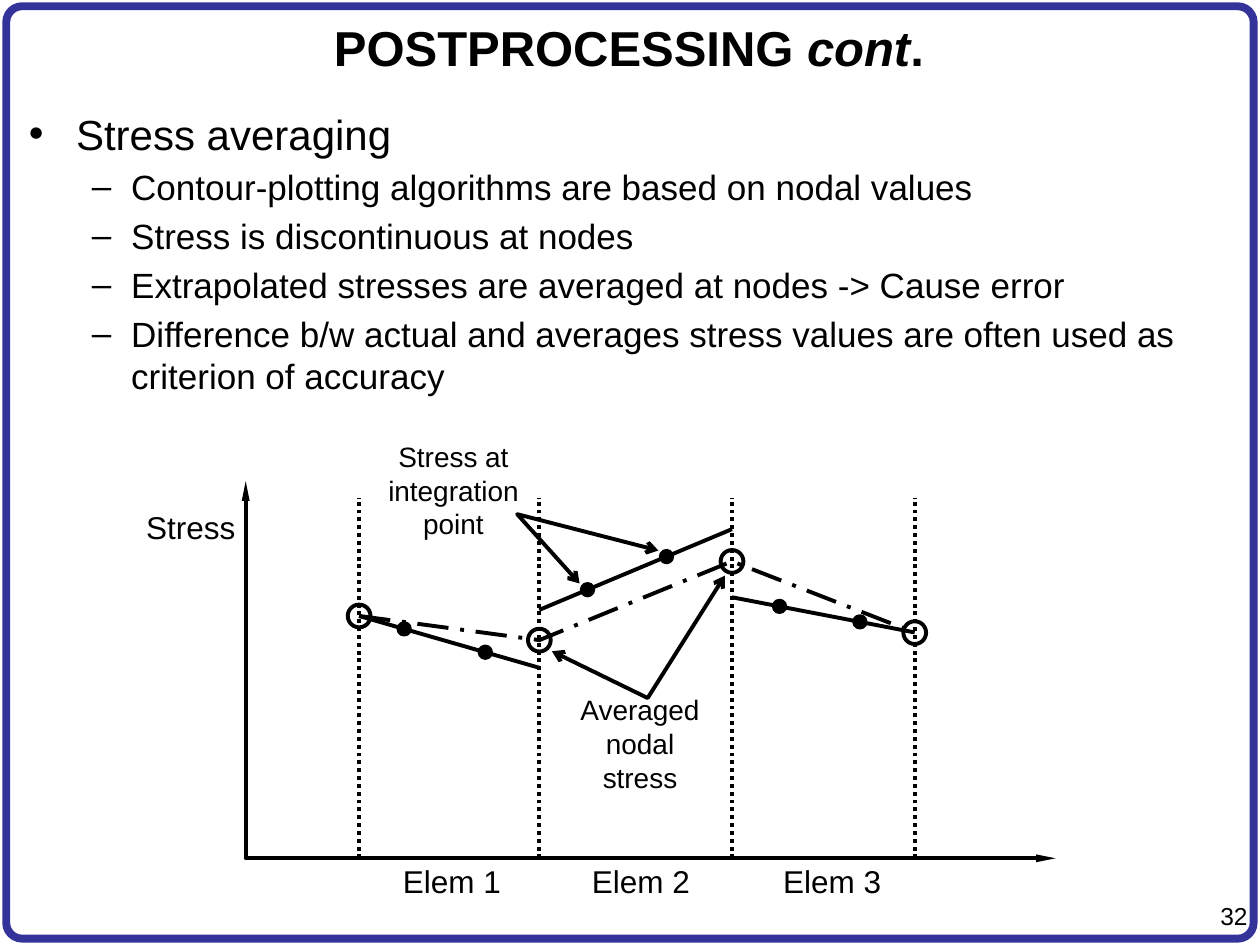
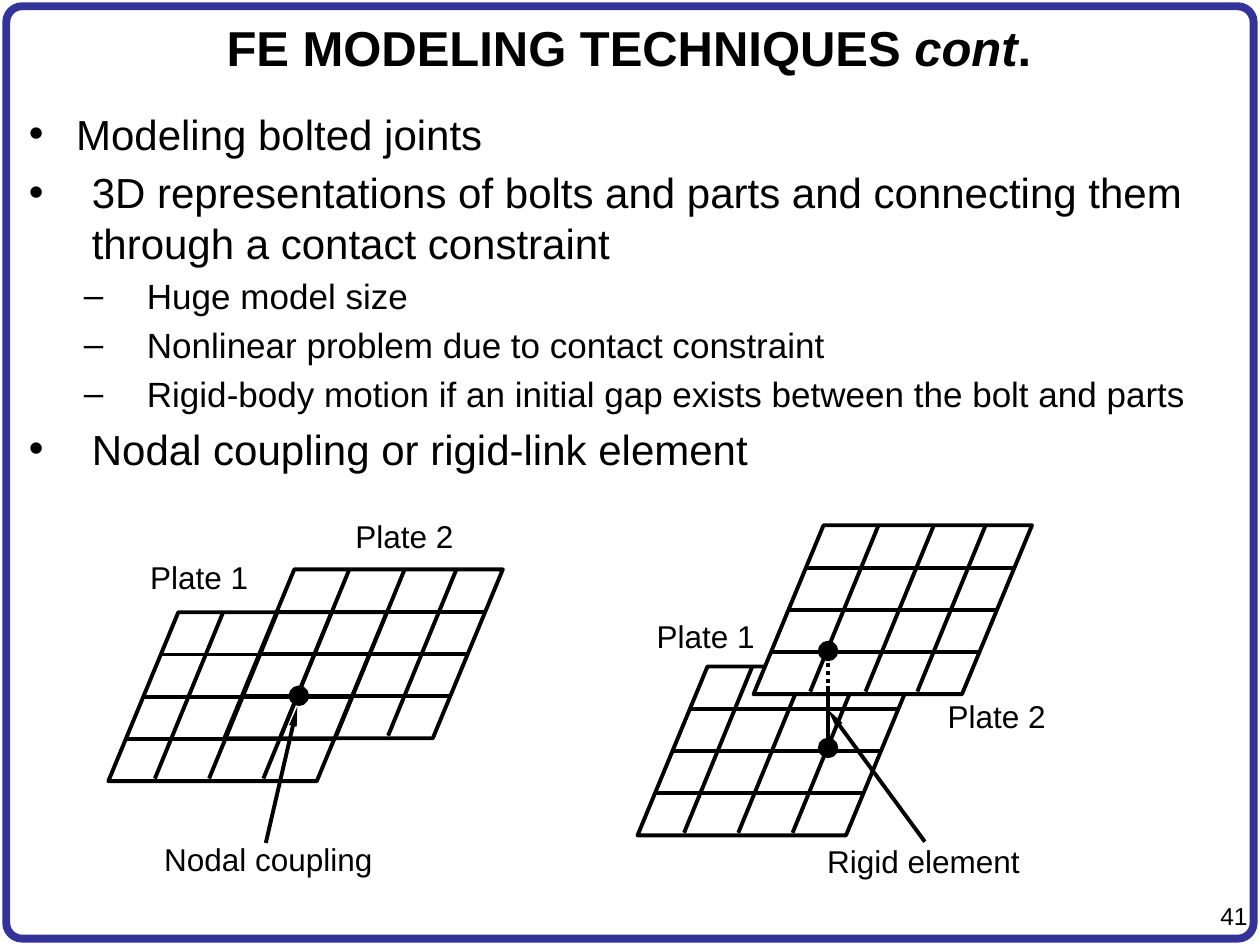
import pptx
import pptx.dml.color
import pptx.enum.dml
import pptx.enum.shapes
import pptx.enum.text
import pptx.oxml
import pptx.oxml.ns
import pptx.util

Pt = pptx.util.Pt
SHAPES = pptx.enum.shapes.MSO_SHAPE
DASH = pptx.enum.dml.MSO_LINE
ALIGN = pptx.enum.text.PP_ALIGN
ANCHOR = pptx.enum.text.MSO_ANCHOR

COLORS = {"frame": "333399", "ink": "000000", "paper": "FFFFFF"}
FONT = "Arial"
LINE_WEIGHT = 2.25
SLENDER = ("triangle", "sm", "lg")
OPEN = ("arrow", "med", "med")

# Bullet styles: left margin, hanging indent, bullet, text size
TOPIC = (27, 27, "•", 24)
WIDE_TOPIC = (36, 36, "•", 24)
DETAIL = (58.5, 22.5, "–", 20)
WIDE_DETAIL = (67.5, 36, "–", 20)

STRESS_SLIDE = {
    "title": "POSTPROCESSING ",
    "number": "32",
    "bullets": [
        (TOPIC, "Stress averaging"),
        (DETAIL, "Contour-plotting algorithms are based on nodal values"),
        (DETAIL, "Stress is discontinuous at nodes"),
        (DETAIL, "Extrapolated stresses are averaged at nodes -> Cause error"),
        (DETAIL, "Difference b/w actual and averages stress values are often "
                 "used as criterion of accuracy"),
    ],
}
JOINT_SLIDE = {
    "title": "FE MODELING TECHNIQUES ",
    "number": "41",
    "bullets": [
        (TOPIC, "Modeling bolted joints"),
        (WIDE_TOPIC, "3D representations of bolts and parts and connecting them "
                     "through a contact constraint"),
        (WIDE_DETAIL, "Huge model size"),
        (WIDE_DETAIL, "Nonlinear problem due to contact constraint"),
        (WIDE_DETAIL, "Rigid-body motion if an initial gap exists between the bolt and parts"),
        (WIDE_TOPIC, "Nodal coupling or rigid-link element"),
    ],
}

# Stress plot
AXES = [(140.4, 275), (140.4, 490.5), (603.2, 490.5)]
NODE_LINE_TOP = 284.4
NODES = [(205.2, 352), (308.2, 365.8), (418.3, 320.8), (522.7, 361.5)]
# Stress at the two ends of each element, and where its integration points lie
ELEMENTS = [
    ((352, 381.6), (0.25, 0.7)),
    ((348.5, 302.4), (0.25, 0.66)),
    ((341.3, 361.4), (0.26, 0.7)),
]
STRESS_POINTERS = [
    [(331.2, 333.4), (295.5, 293.8), (376.2, 314.6)],
    [(315.4, 372.2), (370.1, 398.9), (414.2, 329)],
]
# Labels: text, left, top, width, size
STRESS_LABELS = [
    ("Stress", 72.7, 290.2, 72.7, 18),
    ("Elem 1", 221.8, 492.5, 72.7, 18),
    ("Elem 2", 329.8, 492.5, 72.7, 18),
    ("Elem 3", 439.2, 492.5, 72.7, 18),
    ("Averaged nodal stress", 324, 396, 83.5, 16),
    ("Stress at integration point", 217.4, 251.3, 83.5, 16),
]

# Plate meshes: left, top, column offsets along the base, fill
PLATE_WIDTH, PLATE_HEIGHT, SKEW, ROWS = 159.1, 96.5, 40, 4
PLATE_1_COLUMNS = (26.6, 57.6, 88.6)
PLATE_2_COLUMNS = (32.4, 64, 93.6)
PLATES = [
    (61.9, 349.9, PLATE_1_COLUMNS, "paper"),
    (128.2, 325.4, PLATE_2_COLUMNS, None),
    (364.3, 380.9, PLATE_1_COLUMNS, None),
    (430.6, 300.2, PLATE_2_COLUMNS, "paper"),
]
COUPLED_NODE = (170.8, 397.6)
RIGID_TOP, RIGID_BOTTOM = (473.2, 372), (473.2, 427.4)
PLATE_EDGE_Y = 394.5
JOINT_POINTERS = [((151.9, 481.7), (169.9, 403.9)), ((528.5, 481), (473, 405.4))]
JOINT_LABELS = [
    ("Plate 1", 71.3, 319, 85, 18),
    ("Plate 2", 188.6, 295.2, 85, 18),
    ("Nodal coupling", 83.5, 480.2, 139.7, 18),
    ("Plate 1", 360.7, 352.8, 85, 18),
    ("Plate 2", 527, 398.2, 85, 18),
    ("Rigid element", 457.9, 481, 139.7, 18),
]


def rgb(name):
    return pptx.dml.color.RGBColor.from_string(COLORS[name])


def style_line(line, color="ink", weight=LINE_WEIGHT, dash=None, head=None, tail=None):
    """Style a line; head and tail are (kind, width, length) arrowheads."""
    line.color.rgb = rgb(color)
    line.width = Pt(weight)
    if dash:
        line.dash_style = dash
    for tag, arrow in (("a:headEnd", head), ("a:tailEnd", tail)):
        if arrow:
            end = pptx.oxml.parse_xml(f'<{tag} {pptx.oxml.ns.nsdecls("a")}/>')
            for key, value in zip(("type", "w", "len"), arrow):
                end.set(key, value)
            line._get_or_add_ln().append(end)


def finish(shape, fill=None, **line_style):
    shape.shadow.inherit = False
    if fill:
        shape.fill.solid()
        shape.fill.fore_color.rgb = rgb(fill)
    else:
        shape.fill.background()
    style_line(shape.line, **line_style)


def add_preset(slide, kind, left, top, width, height, adjust=None, fill=None, **line_style):
    shape = slide.shapes.add_shape(kind, Pt(left), Pt(top), Pt(width), Pt(height))
    if adjust is not None:
        shape.adjustments[0] = adjust
    finish(shape, fill, **line_style)


def add_circle(slide, center, diameter, fill=None):
    x, y = center
    add_preset(slide, SHAPES.OVAL, x - diameter / 2, y - diameter / 2,
               diameter, diameter, fill=fill)


def add_segment(slide, start, end, **line_style):
    segment = slide.shapes.add_connector(pptx.enum.shapes.MSO_CONNECTOR.STRAIGHT,
                                         *map(Pt, start + end))
    style_line(segment.line, **line_style)
    segment._element.spPr.append(
        pptx.oxml.parse_xml(f'<a:effectLst {pptx.oxml.ns.nsdecls("a")}/>'))


def add_polyline(slide, points, **line_style):
    corners = [(Pt(x), Pt(y)) for x, y in points]
    builder = slide.shapes.build_freeform(*corners[0])
    builder.add_line_segments(corners[1:], close=False)
    finish(builder.convert_to_shape(), **line_style)


def add_text_frame(slide, left, top, width, height, inset=True):
    frame = slide.shapes.add_textbox(Pt(left), Pt(top), Pt(width), Pt(height)).text_frame
    frame.word_wrap = True
    if not inset:
        frame.margin_left = frame.margin_right = frame.margin_top = frame.margin_bottom = 0
    return frame


def add_run(paragraph, text, size, bold=False, italic=False):
    run = paragraph.add_run()
    run.text = text
    run.font.name = FONT
    run.font.size = Pt(size)
    run.font.bold = bold
    run.font.italic = italic
    run.font.color.rgb = rgb("ink")


def add_labels(slide, labels):
    for text, left, top, width, size in labels:
        paragraph = add_text_frame(slide, left, top, width, 26.6, inset=False).paragraphs[0]
        paragraph.alignment = ALIGN.CENTER
        add_run(paragraph, text, size)


def add_bullets(slide, bullets):
    frame = add_text_frame(slide, 9.4, 58.3, 701.3, 210)
    for index, ((margin, hanging, mark, size), text) in enumerate(bullets):
        paragraph = frame.add_paragraph() if index else frame.paragraphs[0]
        paragraph.space_before = Pt(size * 0.2)
        properties = paragraph._p.get_or_add_pPr()
        properties.set("marL", str(Pt(margin)))
        properties.set("indent", str(-Pt(hanging)))
        for tag, key, value in (("buFont", "typeface", FONT), ("buChar", "char", mark)):
            properties.append(pptx.oxml.parse_xml(
                f'<a:{tag} {pptx.oxml.ns.nsdecls("a")} {key}="{value}"/>'))
        add_run(paragraph, text, size)


def add_base_slide(deck, content):
    """Add a slide with the shared frame, number, title and bullets."""
    slide = deck.slides.add_slide(deck.slide_layouts[6])
    add_preset(slide, SHAPES.ROUNDED_RECTANGLE, 3.6, 3.6, 712.8, 532.8,
               adjust=0.017, color="frame", weight=4.5)

    number = add_text_frame(slide, 681, 511.2, 39, 24).paragraphs[0]
    number.alignment = ALIGN.RIGHT
    add_run(number, content["number"], 14)

    title_frame = add_text_frame(slide, 3, 3.6, 712.8, 46.8)
    title_frame.vertical_anchor = ANCHOR.MIDDLE
    title = title_frame.paragraphs[0]
    title.alignment = ALIGN.CENTER
    for text, italic in ((content["title"], False), ("cont", True), (".", False)):
        add_run(title, text, 28, bold=True, italic=italic)

    add_bullets(slide, content["bullets"])
    return slide


def draw_stress_plot(slide):
    add_polyline(slide, AXES, head=SLENDER, tail=SLENDER)
    for x, _ in NODES:
        add_segment(slide, (x, AXES[1][1]), (x, NODE_LINE_TOP), dash=DASH.ROUND_DOT)
    for (left, _), (right, _), ((start, end), fractions) in zip(NODES, NODES[1:], ELEMENTS):
        add_segment(slide, (left, start), (right, end))
        for part in fractions:
            point = (left + part * (right - left), start + part * (end - start))
            add_circle(slide, point, 6.5, fill="ink")
    add_polyline(slide, NODES, dash=DASH.LONG_DASH_DOT)
    for node in NODES:
        add_circle(slide, node, 13)
    add_labels(slide, STRESS_LABELS)
    for pointer in STRESS_POINTERS:
        add_polyline(slide, pointer, head=OPEN, tail=OPEN)


def draw_plate(slide, left, top, columns, fill):
    add_preset(slide, SHAPES.PARALLELOGRAM, left, top, PLATE_WIDTH, PLATE_HEIGHT,
               adjust=SKEW / PLATE_HEIGHT, fill=fill)
    for offset in columns:
        x = left + offset
        add_segment(slide, (x, top + PLATE_HEIGHT - 1.5), (x + SKEW - 1, top))
    for row in range(1, ROWS):
        x = left + SKEW * (1 - row / ROWS)
        y = top + PLATE_HEIGHT * row / ROWS
        add_segment(slide, (x, y), (x + PLATE_WIDTH - SKEW, y))


def draw_joints(slide):
    for plate in PLATES:
        draw_plate(slide, *plate)
    for node in (COUPLED_NODE, RIGID_TOP, RIGID_BOTTOM):
        add_circle(slide, node, 9.4, fill="ink")
    hidden_end = (RIGID_TOP[0], PLATE_EDGE_Y)
    add_segment(slide, RIGID_BOTTOM, hidden_end)
    add_segment(slide, hidden_end, RIGID_TOP, dash=DASH.ROUND_DOT)
    for start, end in JOINT_POINTERS:
        add_segment(slide, start, end, tail=SLENDER)
    add_labels(slide, JOINT_LABELS)


def main():
    deck = pptx.Presentation()
    deck.slide_width, deck.slide_height = Pt(720), Pt(540)
    draw_stress_plot(add_base_slide(deck, STRESS_SLIDE))
    draw_joints(add_base_slide(deck, JOINT_SLIDE))
    deck.save("out.pptx")


if __name__ == "__main__":
    main()
